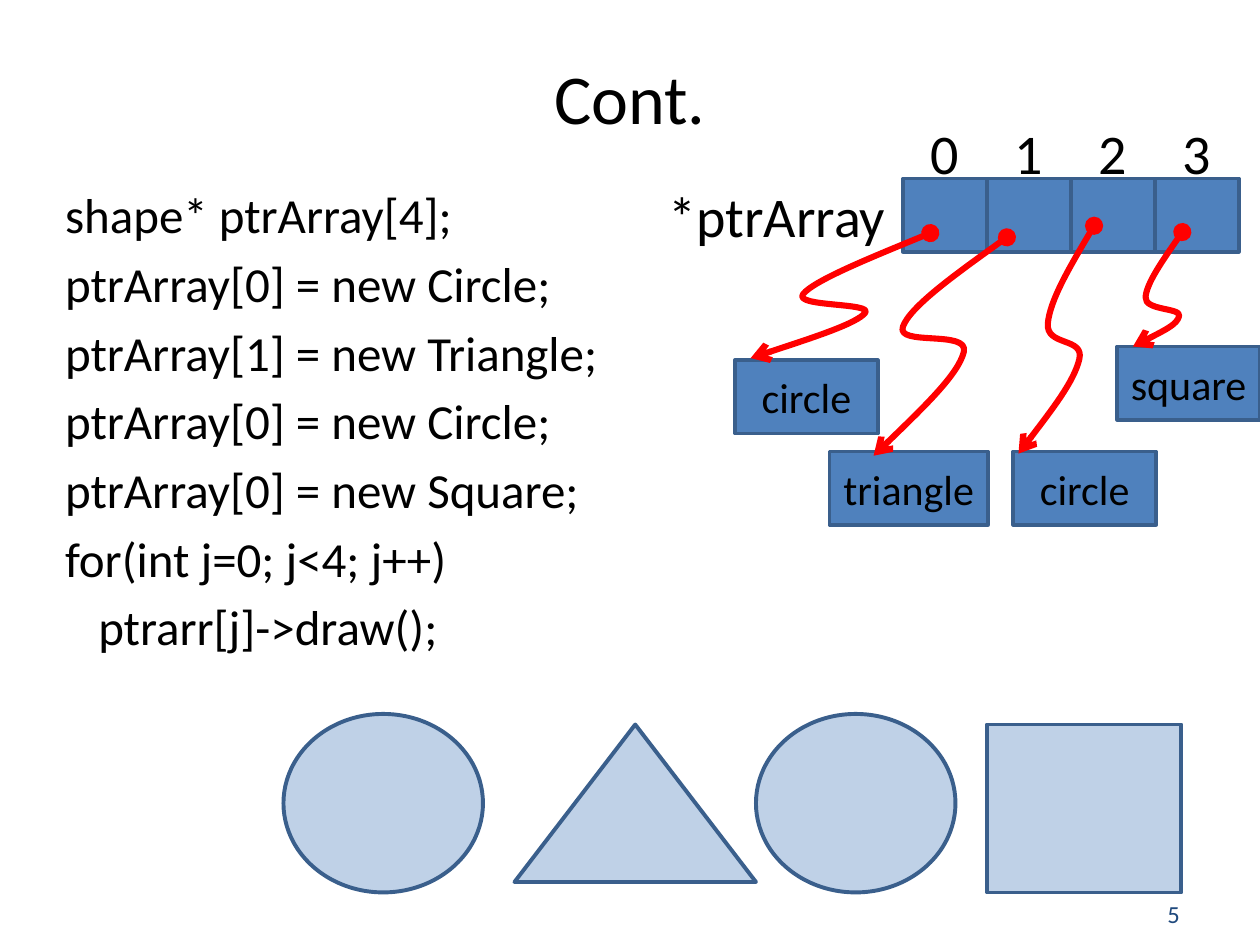
from lxml import etree
from pptx import Presentation
from pptx.dml.color import RGBColor
from pptx.enum.shapes import MSO_SHAPE
from pptx.enum.text import MSO_ANCHOR, PP_ALIGN
from pptx.oxml.ns import qn
from pptx.util import Inches, Pt

RECTANGLE, OVAL = MSO_SHAPE.RECTANGLE, MSO_SHAPE.OVAL
TRIANGLE = MSO_SHAPE.ISOSCELES_TRIANGLE
LEFT, CENTER = PP_ALIGN.LEFT, PP_ALIGN.CENTER
TOP, MIDDLE = MSO_ANCHOR.TOP, MSO_ANCHOR.MIDDLE

COLUMNS, ROWS = 120, 90
CELL_WIDTH, CELL_HEIGHT = 8, 7
ARRAY_LEFT, ARRAY_TOP = 86, 17

CODE = [
    "shape* ptrArray[4];",
    "ptrArray[0] = new Circle;",
    "ptrArray[1] = new Triangle;",
    "ptrArray[0] = new Circle;",
    "ptrArray[0] = new Square;",
    "for(int j=0; j<4; j++)",
    "   ptrarr[j]->draw();",
]

# Label, box (left, top, width), pointer (start, bend, handle, bend, handle, end)
OBJECTS = [
    ("circle", (70, 34.3, 13.6),
     ((88.6, 22.2), (76.5, 28), (-1, 1.25), (82.4, 29.8), (-0.8, 1), (71.5, 34.1))),
    ("triangle", (79, 43, 15.1),
     ((95.9, 22.6), (86, 31.1), (-0.7, 1.9), (91.8, 33.5), (-0.5, 2.1), (83.2, 43.4))),
    ("circle", (96.5, 43, 13.6),
     ((104.2, 21.5), (99.8, 30.8), (-0.2, 2.2), (102.8, 34.2), (-0.5, 2.1), (97, 43.2))),
    ("square", (106.4, 33, 13.6),
     ((112.6, 22.1), (109.1, 28.3), (-0.1, 1.3), (112.3, 30.1), (-0.2, 0.8), (107.9, 33))),
]

DRAWN_SHAPES = [
    (OVAL, (27, 68, 19, 17)),
    (TRIANGLE, (49, 69, 23, 15)),
    (OVAL, (72, 68, 19, 17)),
    (RECTANGLE, (94, 69, 18.5, 16)),
]


def color(value):
    return RGBColor.from_string(value)


def shifted(point, handle, sign):
    return point[0] + sign * handle[0], point[1] + sign * handle[1]


def middle(first, second):
    return (first[0] + second[0]) / 2, (first[1] + second[1]) / 2


class SlideBuilder:
    """Draws on one slide, with lengths in columns and rows of the grid."""
    font = "Calibri"
    ink, blue, outline, red, navy = "000000", "4F81BD", "3A5F8C", "FF0000", "1F497D"

    def __init__(self, deck):
        self.slide = deck.slides.add_slide(deck.slide_layouts[1])
        self.column = deck.slide_width / COLUMNS
        self.row = deck.slide_height / ROWS

    def point(self, x, y):
        return round(x * self.column), round(y * self.row)

    def area(self, left, top, width, height):
        return *self.point(left, top), *self.point(width, height)

    def fill_text(self, box, lines, size, align=CENTER, anchor=MIDDLE, wrap=False, ink=None):
        frame = box.text_frame
        frame.word_wrap = wrap
        frame.vertical_anchor = anchor
        for index, line in enumerate(lines):
            para = frame.add_paragraph() if index else frame.paragraphs[0]
            para.alignment = align
            para.space_before = Pt(size * 0.2 if index else 0)
            span = para.add_run()
            span.text = line
            span.font.name = self.font
            span.font.size = Pt(size)
            span.font.color.rgb = color(ink or self.ink)

    def placeholder(self, index, area, lines, size, align, anchor):
        box = self.slide.placeholders[index]
        box.left, box.top, box.width, box.height = self.area(*area)
        self.fill_text(box, lines, size, align, anchor, wrap=True)
        return box

    def title(self, text, area):
        self.placeholder(0, area, [text], 40, CENTER, MIDDLE)

    def code(self, lines, area):
        box = self.placeholder(1, area, lines, 28, LEFT, TOP)
        for para in box.text_frame.paragraphs:
            properties = para._p.get_or_add_pPr()
            properties.set("marL", "0")
            properties.set("indent", "0")
            etree.SubElement(properties, qn("a:buNone"))

    def label(self, text, area, size=32, align=CENTER, ink=None):
        box = self.slide.shapes.add_textbox(*self.area(*area))
        self.fill_text(box, [text], size, align, wrap=True, ink=ink)

    def shape(self, kind, area, text=None, opacity=None, line_width=2):
        shape = self.slide.shapes.add_shape(kind, *self.area(*area))
        shape.shadow.inherit = False
        shape.fill.solid()
        shape.fill.fore_color.rgb = color(self.blue)
        shape.line.color.rgb = color(self.outline)
        shape.line.width = Pt(line_width)
        if opacity:
            fill = shape._element.spPr.find(qn("a:solidFill"))
            etree.SubElement(fill[0], qn("a:alpha"), val=str(opacity * 1000))
        if text:
            self.fill_text(shape, [text], 24)

    def pointer(self, start, bend, handle, next_bend, next_handle, end):
        """Smooth S-curve with a dot at its start and an arrow at its end."""
        before, after = shifted(bend, handle, -1), shifted(bend, handle, 1)
        next_before = shifted(next_bend, next_handle, -1)
        next_after = shifted(next_bend, next_handle, 1)
        points = [middle(start, before), before, bend,
                  after, next_before, next_bend,
                  next_after, middle(next_after, end), end]
        builder = self.slide.shapes.build_freeform(*self.point(*start))
        builder.add_line_segments([self.point(*p) for p in points], close=False)
        curve = builder.convert_to_shape()
        curve.shadow.inherit = False
        curve.fill.background()
        curve.line.color.rgb = color(self.red)
        curve.line.width = Pt(3.5)
        # Every three line segments become one cubic segment
        lines = list(curve._element.iter(qn("a:lnTo")))
        outline = lines[0].getparent()
        for first in range(0, len(lines), 3):
            cubic = etree.SubElement(outline, qn("a:cubicBezTo"))
            for line in lines[first:first + 3]:
                cubic.append(line[0])
                outline.remove(line)
        stroke = curve._element.spPr.find(qn("a:ln"))
        etree.SubElement(stroke, qn("a:headEnd"), type="oval")
        etree.SubElement(stroke, qn("a:tailEnd"), type="arrow")


def main():
    deck = Presentation()
    deck.slide_width, deck.slide_height = Inches(10), Inches(7.5)
    page = SlideBuilder(deck)

    page.label("5", (110, 85, 8, 4), size=14, align=LEFT, ink=page.navy)
    page.title("Cont.", (6, 4.5, 108, 9.4))
    page.code(CODE, (5, 17, 108, 62.4))

    for index in range(4):
        left = ARRAY_LEFT + index * CELL_WIDTH
        page.shape(RECTANGLE, (left, ARRAY_TOP, CELL_WIDTH, CELL_HEIGHT))
        page.label(str(index), (left, ARRAY_TOP - 6, CELL_WIDTH, CELL_HEIGHT))
    page.label("*ptrArray", (ARRAY_LEFT - 24, ARRAY_TOP, 24, CELL_HEIGHT))

    for name, box, curve in OBJECTS:
        page.shape(RECTANGLE, (*box, CELL_HEIGHT), text=name)
        page.pointer(*curve)
    for kind, area in DRAWN_SHAPES:
        page.shape(kind, area, opacity=36, line_width=2.25)

    deck.save("out.pptx")


if __name__ == "__main__":
    main()
